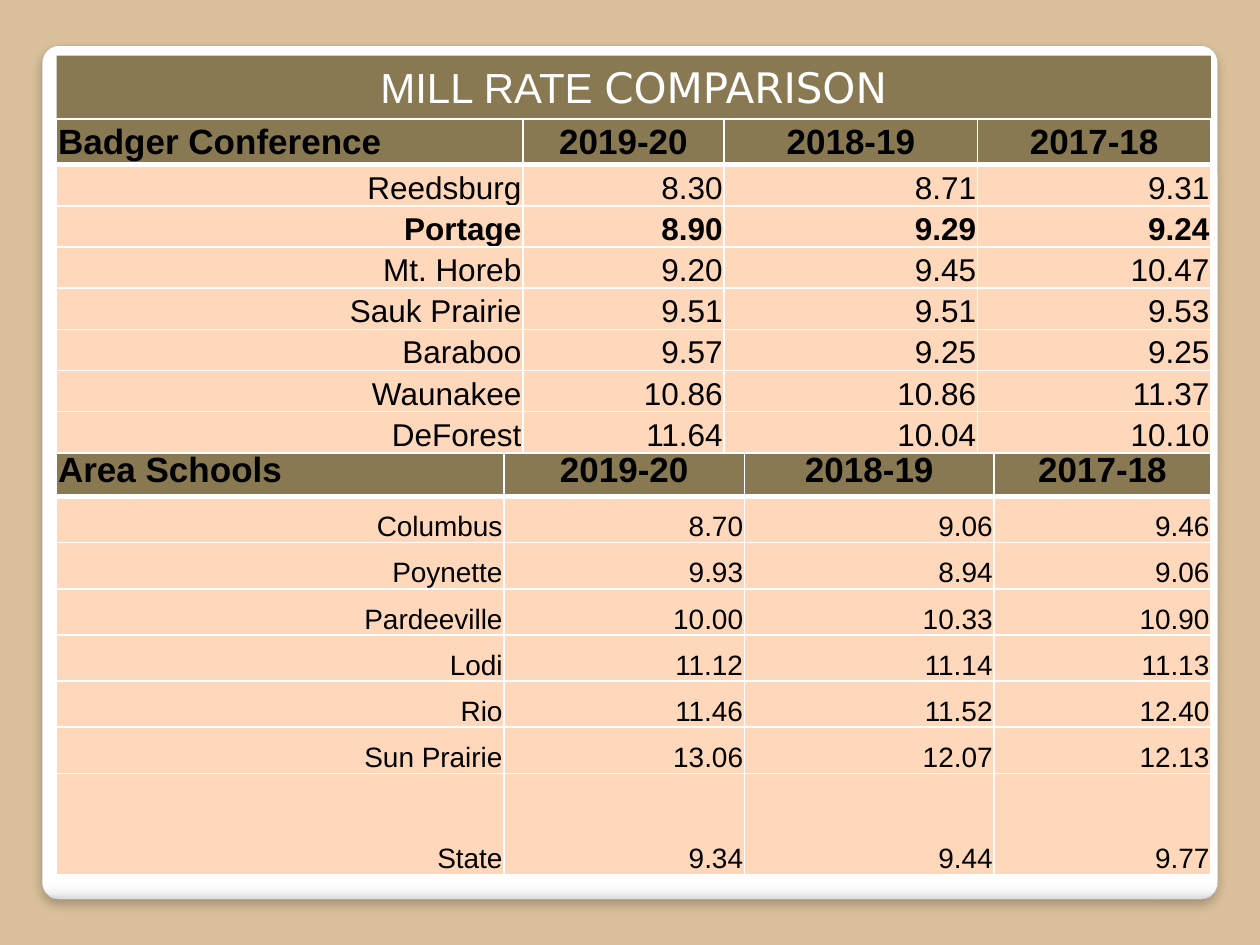
import copy
import dataclasses

import lxml.etree
import pptx
import pptx.dml.color
import pptx.enum.shapes
import pptx.enum.text
import pptx.oxml.ns
import pptx.util

Cm = pptx.util.Cm
Pt = pptx.util.Pt
RGB = pptx.dml.color.RGBColor.from_string
Align = pptx.enum.text.PP_ALIGN
Anchor = pptx.enum.text.MSO_ANCHOR
qn = pptx.oxml.ns.qn


@dataclasses.dataclass
class Theme:
    background: str = "DAC19B"
    band: str = "887952"
    body: str = "FFD7BA"
    light: str = "FFFFFF"
    dark: str = "000000"
    panel_line: str = "A4A4A4"
    panel_stops: tuple = ((0, "FFFFFF"), (0.98, "FFFFFF"), (0.99, "F7F7F7"), (1, "DADADA"))
    font: str = "Arial"
    title_font: str = "DejaVu Sans"
    title_size: int = 24
    header_size: int = 20
    conference_size: int = 18
    area_size: int = 16


theme = Theme()


def apply(target, values):
    for name, value in values.items():
        setattr(target, name, value)


def add_border(cell, side, width):
    properties = cell._tc.get_or_add_tcPr()
    line = lxml.etree.SubElement(properties, qn(f"a:ln{side}"), w=str(Pt(width)))
    fill = lxml.etree.SubElement(line, qn("a:solidFill"))
    lxml.etree.SubElement(fill, qn("a:srgbClr"), val=theme.light)


presentation = pptx.Presentation()
apply(presentation, {"slide_width": Cm(25.4), "slide_height": Cm(19.05)})
slide = presentation.slides.add_slide(presentation.slide_layouts[6])
slide.background.fill.solid()
slide.background.fill.fore_color.rgb = RGB(theme.background)

panel = slide.shapes.add_shape(
    pptx.enum.shapes.MSO_SHAPE.ROUNDED_RECTANGLE, Cm(0.85), Cm(0.92), Cm(23.7), Cm(17.21)
)
panel.adjustments[0] = 0.02
panel.line.color.rgb = RGB(theme.panel_line)
panel.line.width = Pt(0.16)
panel.fill.gradient()
panel.fill.gradient_angle = 270
stop_list = panel.element.spPr.find(".//" + qn("a:gsLst"))
for extra in range(2):
    stop_list.append(copy.deepcopy(stop_list[0]))
for stop, (position, color) in zip(panel.fill.gradient_stops, theme.panel_stops):
    stop.position = position
    stop.color.rgb = RGB(color)
panel.shadow.inherit = False
effects = panel.element.spPr.find(qn("a:effectLst"))
shadow = lxml.etree.SubElement(
    effects, qn("a:outerShdw"), blurRad=str(Pt(6)), dist=str(Pt(4)), dir="5400000", rotWithShape="0"
)
shadow_color = lxml.etree.SubElement(shadow, qn("a:srgbClr"), val=theme.dark)
lxml.etree.SubElement(shadow_color, qn("a:alpha"), val="25000")

left, width = Cm(1.14), Cm(23.27)
title = slide.shapes.add_shape(
    pptx.enum.shapes.MSO_SHAPE.RECTANGLE, left, Cm(1.12), width, Cm(1.27)
)
title.shadow.inherit = False
title.fill.solid()
title.fill.fore_color.rgb = RGB(theme.band)
title.line.fill.background()
apply(title.text_frame, {"word_wrap": True, "vertical_anchor": Anchor.TOP})
paragraph = title.text_frame.paragraphs[0]
paragraph.alignment = Align.CENTER
for text, font_name in (("MILL RATE ", theme.font), ("COMPARISON", theme.title_font)):
    run = paragraph.add_run()
    run.text = text
    apply(run.font, {"name": font_name, "size": Pt(theme.title_size)})
    run.font.color.rgb = RGB(theme.light)

years = ("2019-20", "2018-19", "2017-18")
tables = [
    {
        "top": 8.94,
        "columns": (9.02, 4.85, 5.03, 4.37),
        "heights": [1.07] + [0.93] * 6 + [2.04],
        "size": theme.area_size,
        "rows": [
            ("Area Schools", *years),
            ("Columbus", "8.70", "9.06", "9.46"),
            ("Poynette", "9.93", "8.94", "9.06"),
            ("Pardeeville", "10.00", "10.33", "10.90"),
            ("Lodi", "11.12", "11.14", "11.13"),
            ("Rio", "11.46", "11.52", "12.40"),
            ("Sun Prairie", "13.06", "12.07", "12.13"),
            ("State", "9.34", "9.44", "9.77"),
        ],
    },
    {
        "top": 2.4,
        "columns": (9.4, 4.06, 5.11, 4.7),
        "heights": [0.92] + [0.83] * 7,
        "size": theme.conference_size,
        "rows": [
            ("Badger Conference", *years),
            ("Reedsburg", "8.30", "8.71", "9.31"),
            ("Portage", "8.90", "9.29", "9.24"),
            ("Mt. Horeb", "9.20", "9.45", "10.47"),
            ("Sauk Prairie", "9.51", "9.51", "9.53"),
            ("Baraboo", "9.57", "9.25", "9.25"),
            ("Waunakee", "10.86", "10.86", "11.37"),
            ("DeForest", "11.64", "10.04", "10.10"),
        ],
    },
]

for data in tables:
    rows = data["rows"]
    table = slide.shapes.add_table(
        len(rows), len(data["columns"]), left, Cm(data["top"]), width, Cm(sum(data["heights"]))
    ).table
    apply(table, {"first_row": False, "horz_banding": False})
    for column, column_width in zip(table.columns, data["columns"]):
        column.width = Cm(column_width)
    for row_index, values in enumerate(rows):
        table.rows[row_index].height = Cm(data["heights"][row_index])
        header = row_index == 0
        for column_index, text in enumerate(values):
            cell = table.cell(row_index, column_index)
            apply(cell, {
                "text": text,
                "margin_left": Cm(0.03),
                "margin_right": Cm(0.03),
                "margin_top": Cm(0.03),
                "margin_bottom": Cm(0),
                "vertical_anchor": Anchor.MIDDLE if header else Anchor.BOTTOM,
            })
            for side in "LRTB":
                thick = (header and side == "B") or (row_index == 1 and side == "T")
                add_border(cell, side, 3 if thick else 1)
            cell.fill.solid()
            cell.fill.fore_color.rgb = RGB(theme.band if header else theme.body)
            paragraph = cell.text_frame.paragraphs[0]
            header_alignment = Align.CENTER if column_index else Align.LEFT
            paragraph.alignment = header_alignment if header else Align.RIGHT
            font = paragraph.runs[0].font
            apply(font, {
                "name": theme.font,
                "size": Pt(theme.header_size if header else data["size"]),
                "bold": header or values[0] == "Portage",
            })
            font.color.rgb = RGB(theme.dark)

presentation.save("out.pptx")
